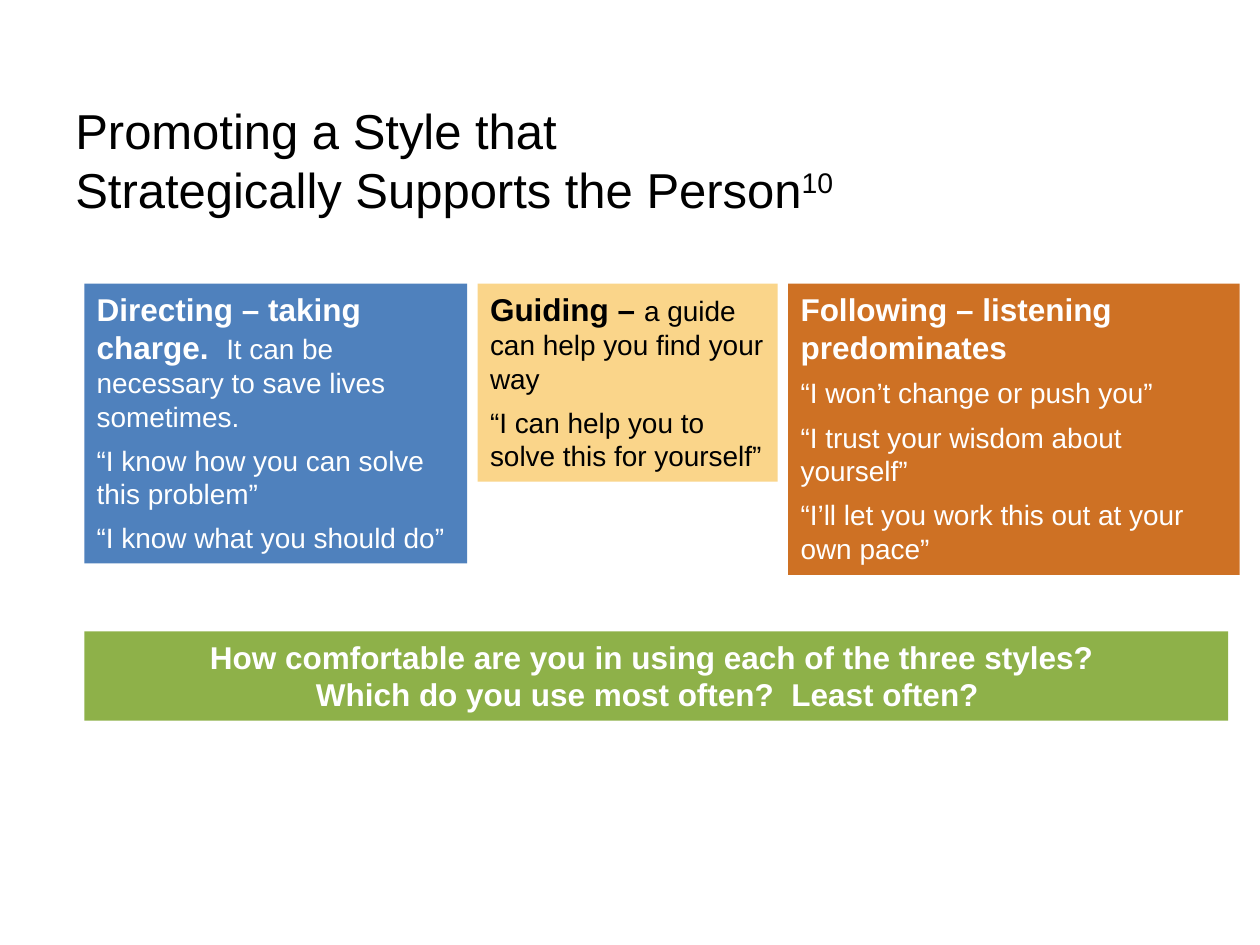
from dataclasses import dataclass

from pptx import Presentation
from pptx.dml.color import RGBColor
from pptx.enum.shapes import MSO_SHAPE
from pptx.enum.text import MSO_ANCHOR, MSO_AUTO_SIZE, PP_ALIGN
from pptx.slide import Slide
from pptx.text.text import _Paragraph, _Run
from pptx.util import Cm, Pt

FONT = "Arial"
COLOURS = {
    "directing": "4F81BD",
    "guiding": "FAD58A",
    "following": "CE7124",
    "question": "8EB149",
    "light": "FFFFFF",
    "dark": "000000",
}
LEFT, STYLES_TOP, GAP = 1.7, 5.72, 0.21  # cm
HEADING, BODY, TITLE = 18, 16, 28  # pt


@dataclass
class Panel:
    width: float
    height: float
    fill: str
    ink: str
    paragraphs: list[list[tuple[str, int]]]  # runs as (text, size)
    space_after: int = 6
    align: PP_ALIGN = PP_ALIGN.LEFT


def colour(name: str) -> RGBColor:
    return RGBColor.from_string(COLOURS[name])


def add_run(paragraph: _Paragraph, text: str, size: int, ink: str, bold: bool = False) -> _Run:
    run = paragraph.add_run()
    run.text = text
    run.font.name = FONT
    run.font.size = Pt(size)
    run.font.bold = bold
    run.font.color.rgb = colour(ink)
    return run


def draw_panel(slide: Slide, panel: Panel, left: float, top: float) -> None:
    box = slide.shapes.add_shape(
        MSO_SHAPE.RECTANGLE, Cm(left), Cm(top), Cm(panel.width), Cm(panel.height))
    box.shadow.inherit = False
    box.fill.solid()
    box.fill.fore_color.rgb = colour(panel.fill)
    box.line.fill.background()
    frame = box.text_frame
    frame.word_wrap = True
    frame.auto_size = MSO_AUTO_SIZE.SHAPE_TO_FIT_TEXT
    frame.vertical_anchor = MSO_ANCHOR.TOP
    for index, runs in enumerate(panel.paragraphs):
        paragraph = frame.add_paragraph() if index else frame.paragraphs[0]
        paragraph.alignment = panel.align
        paragraph.space_after = Pt(panel.space_after)
        for text, size in runs:
            add_run(paragraph, text, size, panel.ink, bold=size == HEADING)


def draw_title(slide: Slide) -> None:
    box = slide.shapes.add_textbox(Cm(1.27), Cm(1.9), Cm(22.23), Cm(2.34))
    box.text_frame.word_wrap = True
    title = box.text_frame.paragraphs[0]
    add_run(title, "Promoting a Style that ", TITLE, "dark")
    title.add_line_break()
    add_run(title, "Strategically Supports the Person", TITLE, "dark")
    citation = add_run(title, "10", TITLE, "dark")
    citation.font._element.set("baseline", "30000")  # superscript


STYLES = [
    Panel(7.72, 5.64, "directing", "light", [
        [("Directing – taking charge.  ", HEADING),
         ("It can be necessary to save lives sometimes.", BODY)],
        [("“I know how you can solve this problem”", BODY)],
        [("“I know what you should do”", BODY)],
    ]),
    Panel(6.05, 3.99, "guiding", "dark", [
        [("Guiding – ", HEADING), ("a guide can help you find your way", BODY)],
        [("“I can help you to solve this for yourself”", BODY)],
    ]),
    Panel(9.1, 5.87, "following", "light", [
        [("Following – listening predominates", HEADING)],
        [("“I won’t change or push you”", BODY)],
        [("“I trust your wisdom about yourself”", BODY)],
        [("“I’ll let you work this out at your own pace”", BODY)],
    ]),
]
QUESTION = Panel(23.06, 1.8, "question", "light", [
    [("How comfortable are you in using each of the three styles? ", HEADING)],
    [("Which do you use most often?  Least often?  ", HEADING)],
], space_after=0, align=PP_ALIGN.CENTER)


def main() -> None:
    deck = Presentation()
    deck.slide_width, deck.slide_height = Cm(25.4), Cm(19.05)
    slide = deck.slides.add_slide(deck.slide_layouts[6])

    draw_title(slide)

    # Three styles side by side
    left = LEFT
    for style in STYLES:
        draw_panel(slide, style, left, STYLES_TOP)
        left += style.width + GAP

    # Closing question
    draw_panel(slide, QUESTION, LEFT, 12.73)

    deck.save("out.pptx")


if __name__ == "__main__":
    main()
